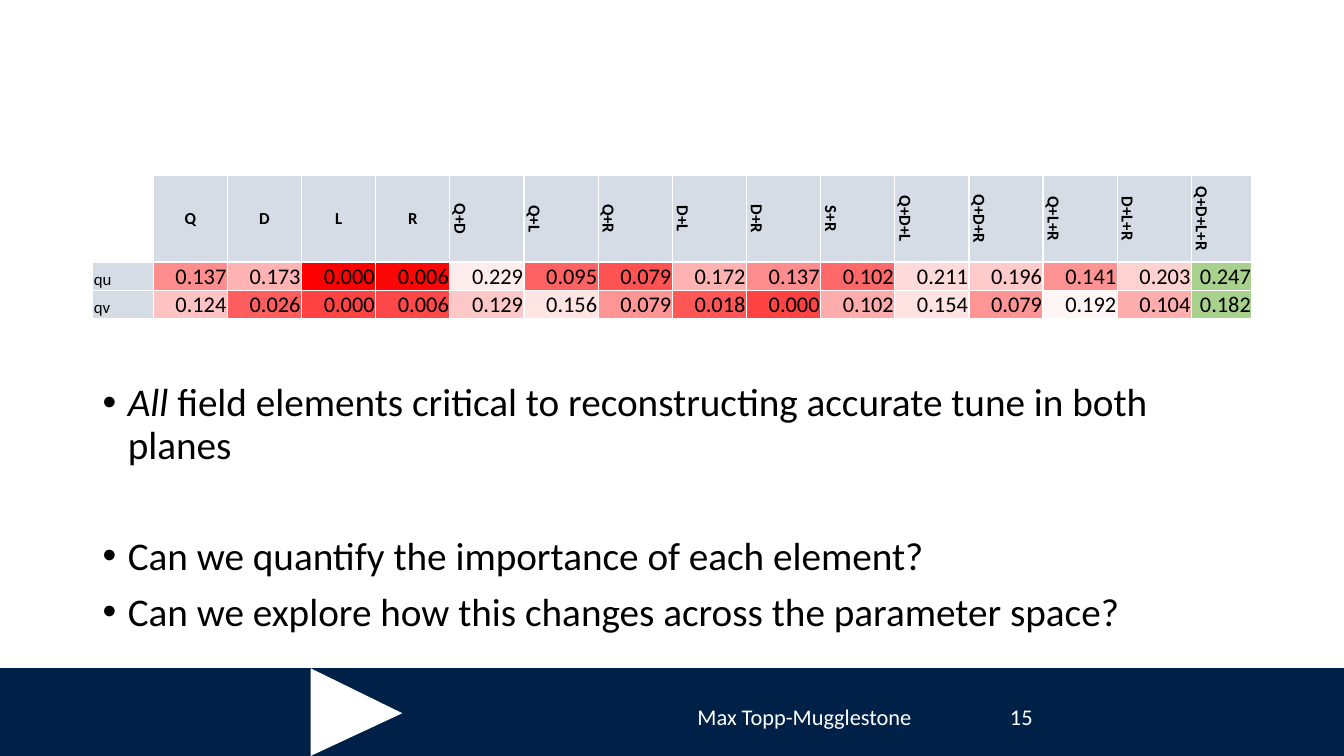
from lxml.etree import SubElement
from pptx import Presentation
from pptx.dml.color import RGBColor
from pptx.enum.shapes import MSO_SHAPE
from pptx.enum.text import MSO_ANCHOR, PP_ALIGN
from pptx.oxml.ns import qn
from pptx.util import Inches, Pt

COLORS = {"navy": "002147", "white": "FFFFFF", "black": "000000",
          "header": "D6DCE5", "target": "A9D18E"}
FONT = "Calibri"

ELEMENTS = ["Q", "D", "L", "R", "Q+D", "Q+L", "Q+R", "D+L", "D+R", "S+R",
            "Q+D+L", "Q+D+R", "Q+L+R", "D+L+R", "Q+D+L+R"]
TUNES = {
    "qu": [0.137, 0.173, 0.000, 0.006, 0.229, 0.095, 0.079, 0.172, 0.137,
           0.102, 0.211, 0.196, 0.141, 0.203, 0.247],
    "qv": [0.124, 0.026, 0.000, 0.006, 0.129, 0.156, 0.079, 0.018, 0.000,
           0.102, 0.154, 0.079, 0.192, 0.104, 0.182],
}
LARGEST_ERROR = 0.247

# Each bullet: space before in points, then (text, italic) runs
BULLETS = [
    (0, [("All", True),
         (" field elements critical to reconstructing accurate tune in both planes", False)]),
    (49, [("Can we quantify the importance of each element?", False)]),
    (10, [("Can we explore how this changes across the parameter space?", False)]),
]


def rgb(name):
    return RGBColor.from_string(COLORS.get(name, name))


def add_run(p, text, color="black", **formats):
    r = p.add_run()
    r.text = text
    r.font.name = FONT
    r.font.color.rgb = rgb(color)
    for key, value in formats.items():
        setattr(r.font, key, value)


def add_text_frame(slide, box):
    tf = slide.shapes.add_textbox(*map(Inches, box)).text_frame
    tf.word_wrap = True
    return tf


def add_plain_shape(slide, kind, box, color):
    sp = slide.shapes.add_shape(kind, *map(Inches, box))
    sp.shadow.inherit = False
    sp.fill.solid()
    sp.fill.fore_color.rgb = rgb(color)
    sp.line.fill.background()
    return sp


def add_footer(slide, left, top, width, height):
    bar = add_plain_shape(slide, MSO_SHAPE.RECTANGLE, (left, top, width, height), "navy")
    bar.line.color.rgb = rgb("navy")
    bar.line.width = Pt(1)

    arrow = add_plain_shape(slide, MSO_SHAPE.ISOSCELES_TRIANGLE,
                            (left + 3.1, top - 0.02, 0.87, 0.91), "white")
    arrow.rotation = 90
    arrow.adjustments[0] = 0.513

    for x, w, text, align in [(5.73, 4.5, "Max Topp-Mugglestone", PP_ALIGN.CENTER),
                              (7.34, 3, "15", PP_ALIGN.RIGHT)]:
        tf = add_text_frame(slide, (left + x, top + 0.28, w, 0.4))
        tf.vertical_anchor = MSO_ANCHOR.MIDDLE
        p = tf.paragraphs[0]
        p.alignment = align
        add_run(p, text, "white", size=Pt(16))


def error_color(tune, target):
    """Fade from red to white as the tune nears its target."""
    level = max(0, round(255 * (1 - abs(tune - target) / LARGEST_ERROR)))
    return f"FF{level:02X}{level:02X}"


def format_cell(cell, text, fill, align, anchor=MSO_ANCHOR.BOTTOM, **formats):
    cell_format = {"vertical_anchor": anchor, "margin_left": Inches(0.01),
                   "margin_right": Inches(0.01), "margin_top": Inches(0.01),
                   "margin_bottom": 0}
    for key, value in cell_format.items():
        setattr(cell, key, value)
    tcPr = cell._tc.get_or_add_tcPr()
    for side in ("lnL", "lnR", "lnT", "lnB"):
        ln = SubElement(tcPr, qn(f"a:{side}"), w=str(Pt(1)))
        SubElement(SubElement(ln, qn("a:solidFill")), qn("a:srgbClr"), val=COLORS["white"])
    if fill:
        cell.fill.solid()
        cell.fill.fore_color.rgb = rgb(fill)
    else:
        cell.fill.background()
    if text:
        p = cell.text_frame.paragraphs[0]
        p.alignment = align
        add_run(p, text, **formats)


def add_tune_table(slide, left, top, width):
    heights = [0.86] + [0.28] * len(TUNES)
    columns = len(ELEMENTS) + 1
    edge = 0.6
    inner = (width - 2 * edge) / (columns - 2)
    table = slide.shapes.add_table(len(heights), columns, Inches(left), Inches(top),
                                   Inches(width), Inches(sum(heights))).table
    table.first_row = table.horz_banding = False
    for row, height in zip(table.rows, heights):
        row.height = Inches(height)
    for i, column in enumerate(table.columns):
        column.width = Inches(edge if i in (0, columns - 1) else inner)

    format_cell(table.cell(0, 0), "", None, PP_ALIGN.LEFT)
    for col, element in enumerate(ELEMENTS, 1):
        cell = table.cell(0, col)
        format_cell(cell, element, "header", PP_ALIGN.CENTER, MSO_ANCHOR.MIDDLE,
                    size=Pt(12), bold=True)
        if "+" in element:
            cell._tc.tcPr.set("vert", "vert")

    for row, (plane, tunes) in enumerate(TUNES.items(), 1):
        format_cell(table.cell(row, 0), plane, "header", PP_ALIGN.LEFT,
                    size=Pt(12), bold=False)
        for col, tune in enumerate(tunes, 1):
            fill = "target" if col == len(tunes) else error_color(tune, tunes[-1])
            format_cell(table.cell(row, col), f"{tune:.3f}", fill, PP_ALIGN.RIGHT,
                        size=Pt(16), bold=False)


def add_bullets(slide, *box):
    tf = add_text_frame(slide, box)
    for i, (space, runs) in enumerate(BULLETS):
        p = tf.add_paragraph() if i else tf.paragraphs[0]
        pPr = p._p.get_or_add_pPr()
        pPr.set("marL", str(Inches(0.25)))
        pPr.set("indent", str(-Inches(0.25)))
        SubElement(pPr, qn("a:buFont"), typeface="Arial")
        SubElement(pPr, qn("a:buChar"), char="•")
        p.line_spacing = 0.9
        p.space_before = Pt(space)
        for text, italic in runs:
            add_run(p, text, size=Pt(28), italic=italic)


def main():
    prs = Presentation()
    prs.slide_width, prs.slide_height = Inches(13.33), Inches(7.5)
    slide = prs.slides.add_slide(prs.slide_layouts[6])
    add_footer(slide, 0, 6.63, 13.33, 0.87)
    add_bullets(slide, 0.92, 3.75, 11.5, 3.01)
    add_tune_table(slide, 0.92, 1.74, 11.5)
    prs.save("out.pptx")


if __name__ == "__main__":
    main()
